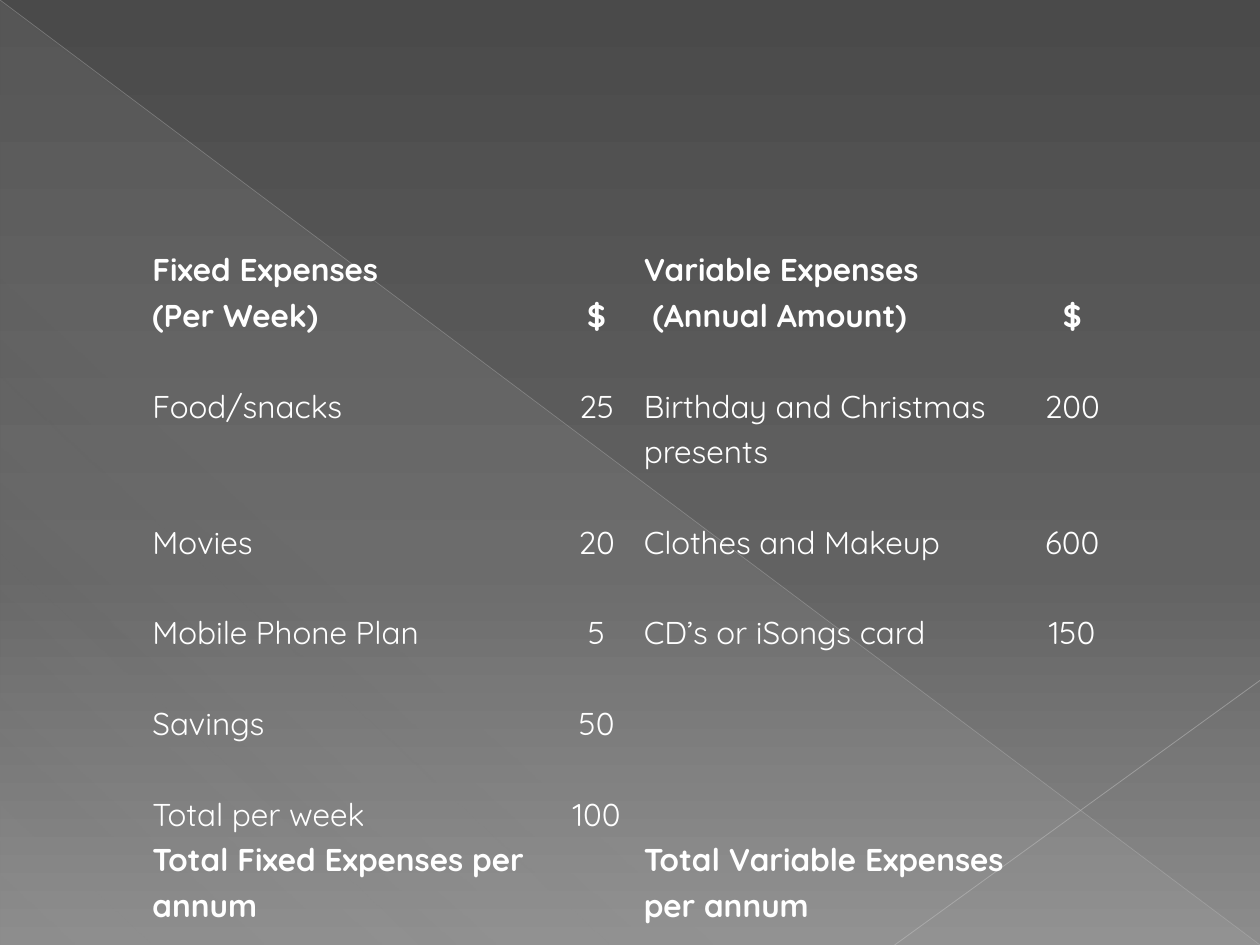
"""Builds a budget slide of fixed and variable expenses."""
from dataclasses import dataclass
from lxml import etree
from pptx import Presentation
from pptx import util as u
from pptx.dml.color import RGBColor
from pptx.enum import shapes, text
from pptx.oxml.ns import qn


@dataclass(frozen=True)
class Theme:
    font: str = "Quicksand"
    size: int = 18
    lead: float = 1.15
    ink: str = "FFFFFF"
    back: tuple = ((0, "4A4A4A", 100), (60, "626262", 100), (100, "8C8C8C", 100))
    glow: tuple = ((0, "D2D2D2", 10), (70, "D2D2D2", 8), (100, "D2D2D2", 1))
    long: tuple = ("BFBFBF", 0.39, 35)
    short: tuple = ("C6C6C6", 0.47, 45)
    plain: str = "{2D5ABB26-0587-4C30-8999-92F81FD0307C}"


class Deck:
    def __init__(self, theme, wide, high):
        self.theme = theme
        self.file = Presentation()
        self.file.slide_width, self.file.slide_height = u.Inches(wide), u.Inches(high)
        self.slide = self.file.slides.add_slide(self.file.slide_layouts[6])

    def place(self, *shares):
        size = self.file.slide_width, self.file.slide_height
        return [round(part * size[i % 2]) for i, part in enumerate(shares)]

    def fade(self, fill, root, stops, angle):
        fill.gradient()
        grad = root.find(".//" + qn("a:gradFill"))
        for child in list(grad):
            grad.remove(child)
        group = etree.SubElement(grad, qn("a:gsLst"))
        for spot, tone, alpha in stops:
            stop = etree.SubElement(group, qn("a:gs"), pos=str(spot * 1000))
            color = etree.SubElement(stop, qn("a:srgbClr"), val=tone)
            etree.SubElement(color, qn("a:alpha"), val=str(alpha * 1000))
        etree.SubElement(grad, qn("a:lin"), ang=str(angle * 60000), scaled="0")

    def back(self):
        self.fade(self.slide.background.fill, self.slide.element, self.theme.back, 90)

    def wedge(self, *shares):
        kind = shapes.MSO_SHAPE.RIGHT_TRIANGLE
        shape = self.slide.shapes.add_shape(kind, *self.place(*shares))
        shape.shadow.inherit = False
        shape.line.fill.background()
        self.fade(shape.fill, shape.element, self.theme.glow, 133)

    def line(self, look, *shares):
        tone, width, alpha = look
        kind = shapes.MSO_CONNECTOR.STRAIGHT
        line = self.slide.shapes.add_connector(kind, *self.place(*shares))
        line.line.color.rgb = RGBColor.from_string(tone)
        line.line.width = u.Pt(width)
        color = line.element.find(".//" + qn("a:ln")).find(".//" + qn("a:srgbClr"))
        etree.SubElement(color, qn("a:alpha"), val=str(alpha * 1000))
        etree.SubElement(line.element.spPr, qn("a:effectLst"))

    def cell(self, cell, words, bold, mid, drop):
        cell.fill.background()
        cell.margin_left = cell.margin_right = u.Inches(0.07)
        cell.margin_top, cell.margin_bottom = u.Inches(drop), 0
        cell.text_frame.text = words
        for para in cell.text_frame.paragraphs:
            para.line_spacing = self.theme.lead
            para.alignment = text.PP_ALIGN.CENTER if mid else text.PP_ALIGN.LEFT
            for run in para.runs:
                run.font.name, run.font.size = self.theme.font, u.Pt(self.theme.size)
                run.font.bold = bold
                run.font.color.rgb = RGBColor.from_string(self.theme.ink)

    def table(self, left, top, cols, rows, data, step):
        spot = self.place(left, top, sum(cols), sum(rows))
        frame = self.slide.shapes.add_table(len(rows), len(cols), *spot)
        grid = frame.table
        grid.first_row = grid.horz_banding = False
        frame.element.find(".//" + qn("a:tableStyleId")).text = self.theme.plain
        for col, share in zip(grid.columns, cols):
            col.width = self.place(share)[0]
        for row, share in zip(grid.rows, rows):
            row.height = self.place(0, share)[1]
        for i, line in enumerate(data):
            bold = i in (0, len(data) - 1)
            for j, words in enumerate(line):
                mid = j % 2 == 1
                drop = step if words and (mid or not bold) else 0
                self.cell(grid.cell(i, j), words, bold, mid, drop)


DATA = (
    ("Fixed Expenses\n(Per Week)", "$", "Variable Expenses\n (Annual Amount)", "$"),
    ("Food/snacks", "25", "Birthday and Christmas presents", "200"),
    ("Movies", "20", "Clothes and Makeup", "600"),
    ("Mobile Phone Plan", "5", "CD’s or iSongs card", "150"),
    ("Savings", "50", "", ""),
    ("Total per week", "100", "", ""),
    ("Total Fixed Expenses per annum", "", "Total Variable Expenses per annum", ""),
)


def main():
    theme = Theme()
    wide, high, step = 10, 7.5, 0.36
    deck = Deck(theme, wide, high)
    deck.back()
    deck.wedge(0, 0, 1, 1)
    deck.line(theme.long, 0, 0, 1, 1)
    deck.line(theme.short, 1, 0.72, 0.71, 1)
    cols = [size / wide for size in (3.29, 0.61, 3.08, 0.78)]
    rows = [count * step / high for count in (2, 3, 2, 2, 2, 2, 2.4)]
    deck.table(1.14 / wide, 1.94 / high, cols, rows, DATA, step)
    deck.file.save("out.pptx")


if __name__ == "__main__":
    main()
